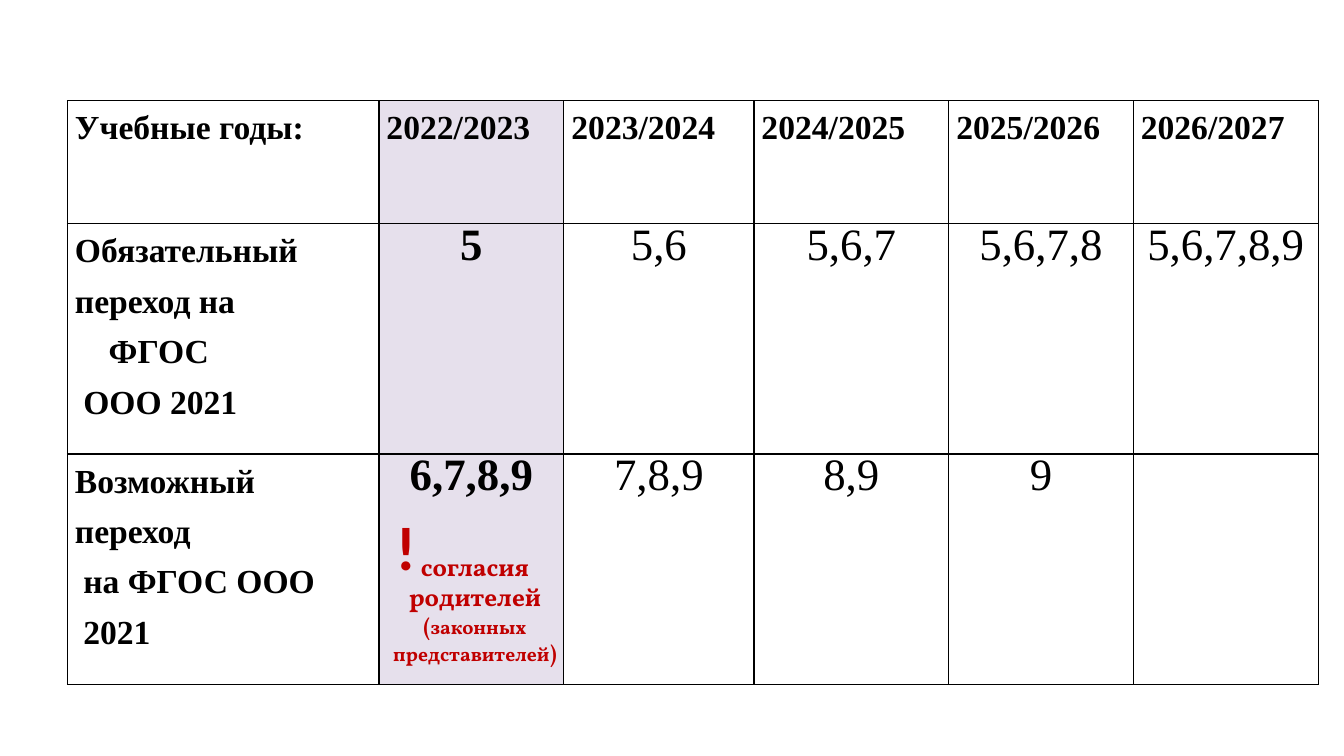
"""Build a slide with the timetable of the move to the 2021 school standard."""
from lxml.etree import SubElement
from pptx import Presentation
from pptx.dml.color import RGBColor
from pptx.enum.text import PP_ALIGN
from pptx.oxml.ns import qn
from pptx.util import Cm, Pt

BLACK = RGBColor(0x00, 0x00, 0x00)
RED = RGBColor(0xC0, 0x00, 0x00)
LILAC = RGBColor(0xE6, 0xE0, 0xEC)

YEARS = ["2022/2023", "2023/2024", "2024/2025", "2025/2026", "2026/2027"]
REQUIRED = ["5", "5,6", "5,6,7", "5,6,7,8", "5,6,7,8,9"]
POSSIBLE = ["6,7,8,9", "7,8,9", "8,9", "9", ""]
ROW_TITLES = [
    [("Учебные годы:", 0)],
    [("Обязательный", 0), ("переход на", 0), ("ФГОС", 0.85), ("ООО 2021", 0.21)],
    [("Возможный", 0), ("переход", 0), ("на ФГОС ООО", 0.21), ("2021", 0.21)],
]
ROWS = list(zip(ROW_TITLES, [YEARS, REQUIRED, POSSIBLE]))
WIDTHS = [7.85, 4.66, 4.79, 4.91, 4.65, 4.66]
HEIGHTS = [3.1, 5.8, 5.8]
CURRENT_YEAR = 1

TITLE_FONT = {"name": "Times New Roman", "size": Pt(24), "bold": True}
CLASS_FONT = {"name": "Times New Roman", "size": Pt(32), "bold": False}
CURRENT_FONT = {**CLASS_FONT, "bold": True}
CELL_FORMAT = {"margin_left": Cm(0.19), "margin_right": Cm(0.19),
               "margin_top": Cm(0.64), "margin_bottom": Cm(0)}
LINE_FORMAT = {"line_spacing": Pt(15), "space_before": Pt(18), "space_after": Pt(3)}

NOTES = [
    ((9.53, 13.77, 4.88, 3.25), "Vollkorn", PP_ALIGN.CENTER, [
        [("согласия родителей", 18)],
        [("(", 16), ("законных представителей", 14), (")", 16)],
    ]),
    ((9.73, 12.7, 1.07, 2.13), "Calibri", PP_ALIGN.LEFT, [[("!", 44)]]),
]


def set_all(target, values):
    for name, value in values.items():
        setattr(target, name, value)


def add_span(para, text, font, color):
    span = para.add_run()
    span.text = text
    set_all(span.font, font)
    span.font.color.rgb = color


def draw_borders(cell):
    properties = cell._tc.get_or_add_tcPr()
    for index, side in enumerate(("lnL", "lnR", "lnT", "lnB")):
        line = SubElement(properties, qn(f"a:{side}"), w=str(Pt(1)))
        fill = SubElement(line, qn("a:solidFill"))
        SubElement(fill, qn("a:srgbClr"), val=str(BLACK))
        properties.insert(index, line)


def fill_cell(cell, lines, font, align, shaded):
    set_all(cell, CELL_FORMAT)
    if shaded:
        cell.fill.solid()
        cell.fill.fore_color.rgb = LILAC
    else:
        cell.fill.background()
    draw_borders(cell)
    frame = cell.text_frame
    for index, (text, indent) in enumerate(lines):
        para = frame.add_paragraph() if index else frame.paragraphs[0]
        set_all(para, {**LINE_FORMAT, "alignment": align})
        if index == 0:
            para.space_before = Pt(0)
        if indent:
            para._p.get_or_add_pPr().set("marL", str(Cm(indent)))
        if text:
            add_span(para, text, font, BLACK)


def add_timetable(page):
    table = page.shapes.add_table(len(ROWS), len(WIDTHS), Cm(1.7), Cm(2.54),
                                  Cm(sum(WIDTHS)), Cm(sum(HEIGHTS))).table
    set_all(table, {"first_row": False, "horz_banding": False})
    for column, width in zip(table.columns, WIDTHS):
        column.width = Cm(width)
    for row, height in zip(table.rows, HEIGHTS):
        row.height = Cm(height)
    for r, (title, values) in enumerate(ROWS):
        fill_cell(table.cell(r, 0), title, TITLE_FONT, PP_ALIGN.LEFT, False)
        for c, value in enumerate(values, start=1):
            current = c == CURRENT_YEAR
            if r == 0:
                font, align = TITLE_FONT, PP_ALIGN.LEFT
            else:
                font = CURRENT_FONT if current else CLASS_FONT
                align = PP_ALIGN.CENTER
            fill_cell(table.cell(r, c), [(value, 0)], font, align, current)


def add_note(page, place, font_name, align, lines):
    box = page.shapes.add_textbox(*map(Cm, place))
    frame = box.text_frame
    frame.word_wrap = True
    for index, spans in enumerate(lines):
        para = frame.add_paragraph() if index else frame.paragraphs[0]
        para.alignment = align
        for text, size in spans:
            add_span(para, text, {"name": font_name, "size": Pt(size), "bold": True}, RED)


def main():
    deck = Presentation()
    set_all(deck, {"slide_width": Cm(33.87), "slide_height": Cm(19.05)})
    page = deck.slides.add_slide(deck.slide_layouts[6])
    add_timetable(page)
    for note in NOTES:
        add_note(page, *note)
    deck.save("out.pptx")


if __name__ == "__main__":
    main()
